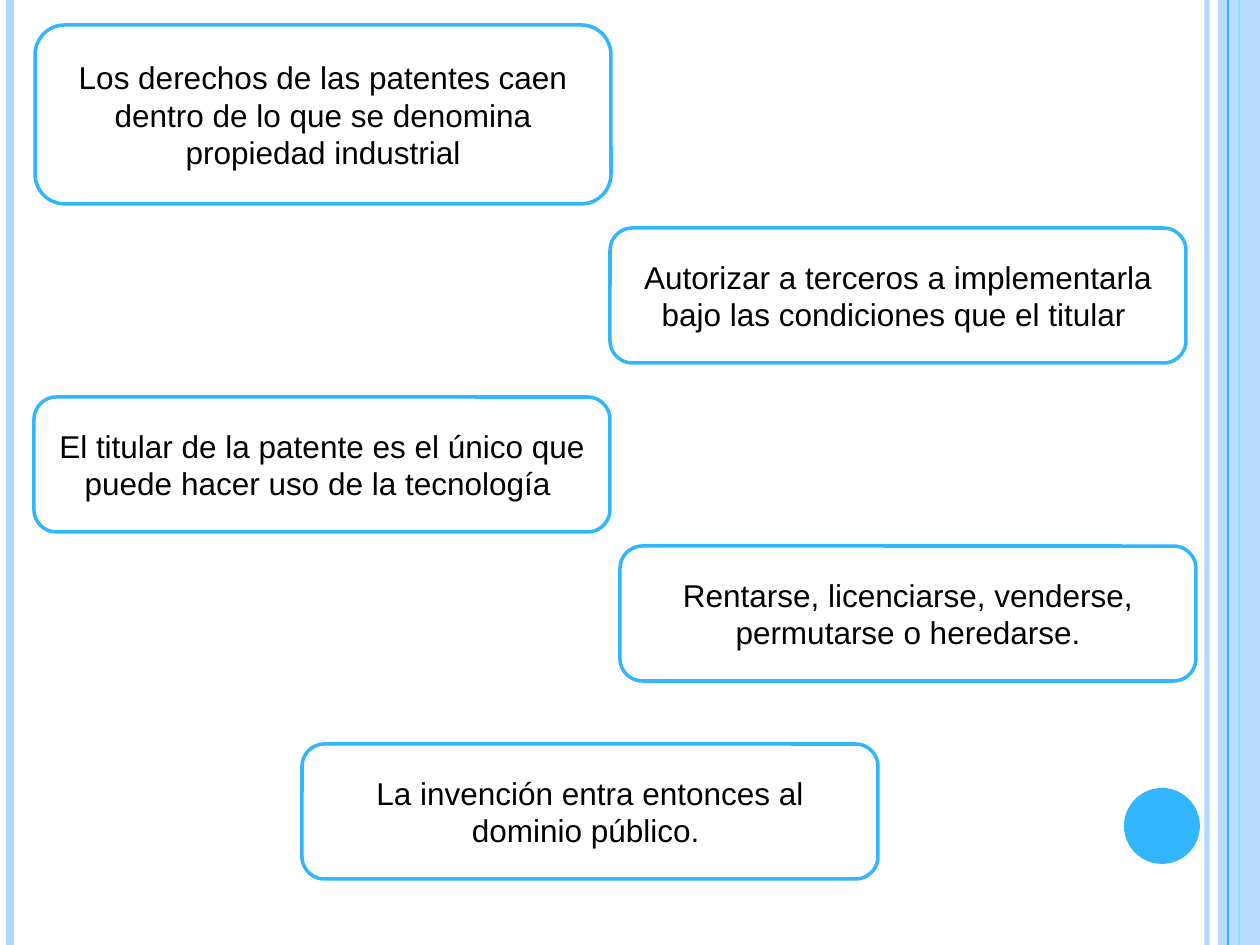
from lxml.etree import SubElement
from pptx import Presentation
from pptx.dml.color import RGBColor
from pptx.enum.shapes import MSO_CONNECTOR, MSO_SHAPE
from pptx.enum.text import MSO_ANCHOR, PP_ALIGN
from pptx.oxml.ns import qn
from pptx.util import Emu, Pt

PX = 914400 / 126
WIDTH, HEIGHT = 1260, 945
BLUE, PALE, WHITE, BLACK = "31B6FD", "AED7FE", "FFFFFF", "000000"

# x, colour, line width in points, opacity in percent
STRIPES = [
    (1207, PALE, 3, 93),
    (10, PALE, 4.5, 100),
    (1239, BLUE, 1.5, 100),
    (1228, BLUE, 0.75, 100),
]
BAND = (1218, 0, 42, HEIGHT)
DOT = (1124, 788, 76, 76)

BOX_WIDTH = 576
# left, top, height, text
STATEMENTS = [
    (35, 25, 179, "Los derechos de las patentes caen dentro de lo que se denomina propiedad industrial"),
    (610, 228, 135, "Autorizar a terceros a implementarla bajo las condiciones que el titular "),
    (34, 397, 135, "El titular de la patente es el único que puede hacer uso de la tecnología "),
    (620, 546, 135, "Rentarse, licenciarse, venderse, permutarse o heredarse."),
    (302, 744, 135, "La invención entra entonces al dominio público. "),
]


def px(value):
    return Emu(round(value * PX))


def color(value):
    return RGBColor.from_string(value)


def set_opacity(element, percent):
    for rgb in element.iter(qn("a:srgbClr")):
        SubElement(rgb, qn("a:alpha")).set("val", str(percent * 1000))


def add_stripe(page, x, tone, width, opacity):
    stripe = page.shapes.add_connector(MSO_CONNECTOR.STRAIGHT, px(x), 0, px(x), px(HEIGHT))
    stripe.line.color.rgb = color(tone)
    stripe.line.width = Pt(width)
    properties = stripe._element.spPr
    if opacity < 100:
        set_opacity(properties, opacity)
    SubElement(properties, qn("a:effectLst"))


def add_figure(page, kind, frame, fill):
    figure = page.shapes.add_shape(kind, *map(px, frame))
    figure.shadow.inherit = False
    figure.fill.solid()
    figure.fill.fore_color.rgb = color(fill)
    figure.line.fill.background()
    return figure


def add_statement(page, left, top, height, text):
    box = add_figure(page, MSO_SHAPE.ROUNDED_RECTANGLE, (left, top, BOX_WIDTH, height), WHITE)
    box.line.color.rgb = color(BLUE)
    box.line.width = Pt(2)
    frame = box.text_frame
    frame.word_wrap = True
    frame.vertical_anchor = MSO_ANCHOR.MIDDLE
    frame.text = text
    para = frame.paragraphs[0]
    para.alignment = PP_ALIGN.CENTER
    font = para.runs[0].font
    font.name = "Arial"
    font.size = Pt(18)
    font.color.rgb = color(BLACK)


def main():
    deck = Presentation()
    deck.slide_width, deck.slide_height = px(WIDTH), px(HEIGHT)
    page = deck.slides.add_slide(deck.slide_layouts[6])

    *under_band, over_band = STRIPES
    for stripe in under_band:
        add_stripe(page, *stripe)
    band = add_figure(page, MSO_SHAPE.RECTANGLE, BAND, PALE)
    set_opacity(band._element.spPr, 87)
    add_stripe(page, *over_band)
    add_figure(page, MSO_SHAPE.OVAL, DOT, BLUE)

    for statement in STATEMENTS:
        add_statement(page, *statement)
    deck.save("out.pptx")


if __name__ == "__main__":
    main()
